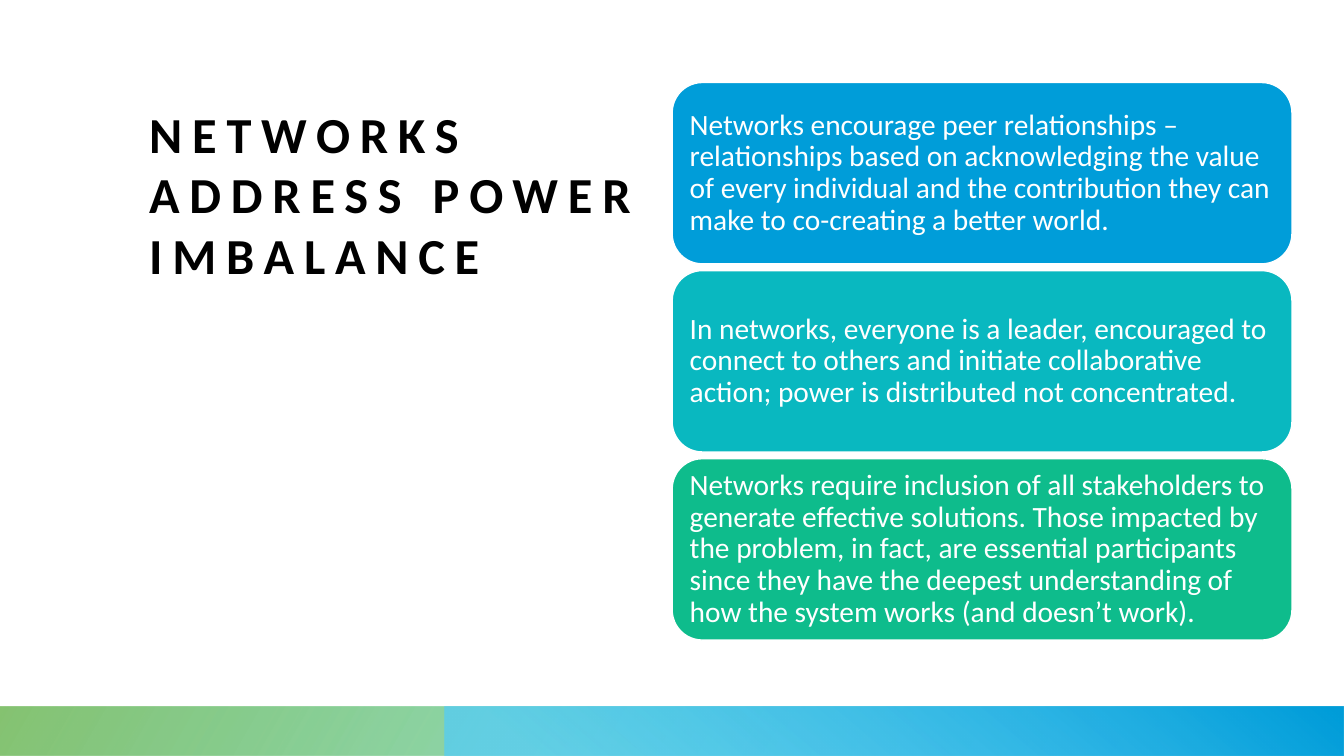
from dataclasses import dataclass

from lxml.etree import SubElement
from pptx import Presentation
from pptx.dml.color import RGBColor as RGB
from pptx.enum.shapes import MSO_SHAPE as Shape
from pptx.enum.text import MSO_ANCHOR as Anchor, MSO_AUTO_SIZE as AutoSize, PP_ALIGN as Align
from pptx.oxml.ns import qn
from pptx.util import Cm, Pt


@dataclass(frozen=True)
class Theme:
    font: str = "Calibri"
    title_size: int = 36
    body_size: int = 21
    title_spacing: int = 7
    black: str = "000000"
    white: str = "FFFFFF"
    blue: str = "009DD9"
    sky: str = "4FCEFF"
    teal: str = "09B8C0"
    green: str = "0EBC8C"
    leaf: str = "71B959"


THEME = Theme()
WIDTH, HEIGHT = 33.87, 19.05
BAND_HEIGHT = 1.25

TITLE = "NETWORKS ADDRESS POWER IMBALANCE"
CARDS = [
    ("Networks encourage peer relationships – relationships based on acknowledging "
     "the value of every individual and the contribution they can make to "
     "co-creating a better world.", THEME.blue),
    ("In networks, everyone is a leader, encouraged to connect to others and initiate "
     "collaborative action; power is distributed not concentrated.", THEME.teal),
    ("Networks require inclusion of all stakeholders to generate effective solutions. "
     "Those impacted by the problem, in fact, are essential participants since they "
     "have the deepest understanding of how the system works (and doesn’t work).",
     THEME.green),
]


def set_margins(tf, margin):
    tf.margin_left = tf.margin_right = tf.margin_top = tf.margin_bottom = Cm(margin)


def style_run(r, size, color, bold=False):
    r.font.name = THEME.font
    r.font.size = Pt(size)
    r.font.bold = bold
    r.font.color.rgb = RGB.from_string(color)


def add_title(s, left, top, width, height):
    sp = s.shapes.title
    sp.left, sp.top, sp.width, sp.height = map(Cm, (left, top, width, height))
    tf = sp.text_frame
    tf.text = TITLE
    tf.word_wrap = True
    tf.auto_size = AutoSize.NONE
    tf.vertical_anchor = Anchor.TOP
    set_margins(tf, 0)
    p = tf.paragraphs[0]
    p.alignment = Align.LEFT
    r = p.runs[0]
    style_run(r, THEME.title_size, THEME.black, bold=True)
    r.font._element.set("spc", str(THEME.title_spacing * 100))


def add_gradient_bar(s, left, top, width, height, stops, angle):
    """Draw a bar; each stop is (position, colour, opacity in percent)."""
    sp = s.shapes.add_shape(Shape.RECTANGLE, *map(Cm, (left, top, width, height)))
    sp.shadow.inherit = False
    sp.line.fill.background()
    sp.fill.gradient()
    sp.fill.gradient_angle = angle
    for stop, (position, color, opacity) in zip(sp.fill.gradient_stops, stops):
        stop.position = position
        stop.color.rgb = RGB.from_string(color)
    for rgb, (_, _, opacity) in zip(sp._element.spPr.iter(qn("a:srgbClr")), stops):
        SubElement(rgb, qn("a:alpha")).set("val", str(opacity * 1000))


def add_footer_band(s, left, top, width, height):
    split = width * 0.331
    add_gradient_bar(s, left, top, width, height,
                     [(0.14, THEME.green, 28), (1, THEME.leaf, 85)], 150)
    add_gradient_bar(s, left + split, top, width - split, height,
                     [(0.09, THEME.sky, 68), (0.99, THEME.blue, 100)], 50)


def add_card(s, left, top, width, height, text, color):
    sp = s.shapes.add_shape(Shape.ROUNDED_RECTANGLE, *map(Cm, (left, top, width, height)))
    sp.shadow.inherit = False
    sp.fill.solid()
    sp.fill.fore_color.rgb = RGB.from_string(color)
    sp.line.color.rgb = RGB.from_string(THEME.white)
    sp.line.width = Pt(1)
    tf = sp.text_frame
    tf.text = text
    tf.word_wrap = True
    tf.vertical_anchor = Anchor.MIDDLE
    set_margins(tf, 0.22)
    p = tf.paragraphs[0]
    p.alignment = Align.LEFT
    p.line_spacing = 0.9
    style_run(p.runs[0], THEME.body_size, THEME.white)


def add_card_stack(s, left, top, width, height, gap=0.17):
    card_height = (height - gap * (len(CARDS) - 1)) / len(CARDS)
    for i, (text, color) in enumerate(CARDS):
        add_card(s, left, top + i * (card_height + gap), width, card_height, text, color)


def main():
    prs = Presentation()
    prs.slide_width, prs.slide_height = Cm(WIDTH), Cm(HEIGHT)
    s = prs.slides.add_slide(prs.slide_layouts[5])
    s.background.fill.solid()
    s.background.fill.fore_color.rgb = RGB.from_string(THEME.white)
    add_title(s, 3.76, 2.59, 12.75, 12.67)
    add_footer_band(s, 0, HEIGHT - BAND_HEIGHT, WIDTH, BAND_HEIGHT)
    add_card_stack(s, 16.94, 2.08, 15.62, 14.05)
    prs.save("out.pptx")


if __name__ == "__main__":
    main()
